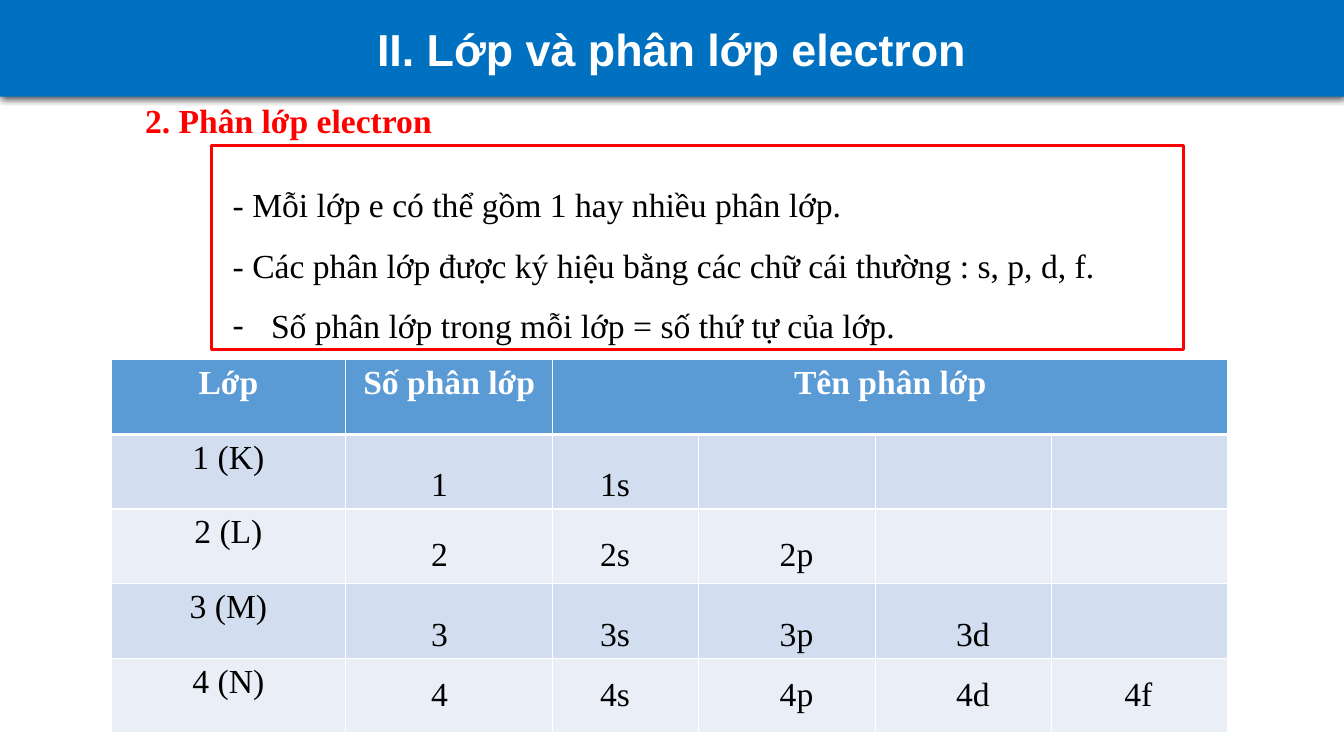
import lxml.etree
import pptx
import pptx.dml.color
import pptx.enum.shapes
import pptx.enum.text
import pptx.oxml
import pptx.oxml.ns
import pptx.util

Inches = pptx.util.Inches
ALIGN = pptx.enum.text.PP_ALIGN
ANCHOR = pptx.enum.text.MSO_ANCHOR

COLORS = {
    "banner": "0070C0", "red": "FF0000", "black": "000000", "white": "FFFFFF",
    "header": "5B9BD5", "odd": "D2DEEF", "even": "EAEFF7",
}


class LessonSlide:
    """Holds the lesson style and the slide being drawn."""

    def __init__(self, slide):
        self.slide = slide
        self.font = "Times New Roman"
        self.size = 24

    def color(self, name):
        return pptx.dml.color.RGBColor.from_string(COLORS[name])

    def add_element(self, parent, tag, **attributes):
        element = lxml.etree.SubElement(parent, pptx.oxml.ns.qn(tag))
        for key, value in attributes.items():
            element.set(key, str(value))
        return element

    def add_text(self, paragraph, text, color="black", bold=False, align=ALIGN.LEFT, font=None, size=None):
        paragraph.alignment = align
        run = paragraph.add_run()
        run.text = text
        run.font.name = font or self.font
        run.font.size = pptx.util.Pt(size or self.size)
        run.font.bold = bold
        run.font.color.rgb = self.color(color)

    def rectangle(self, shapes, left, top, width, height, fill=None, line=None):
        shape = shapes.add_shape(
            pptx.enum.shapes.MSO_SHAPE.RECTANGLE,
            Inches(left), Inches(top), Inches(width), Inches(height))
        shape.shadow.inherit = False
        if fill:
            shape.fill.solid()
            shape.fill.fore_color.rgb = self.color(fill)
        else:
            shape.fill.background()
        if line:
            shape.line.color.rgb = self.color(line)
            shape.line.width = pptx.util.Pt(2.25)
        else:
            shape.line.fill.background()
        return shape

    def banner(self, text):
        shape = self.rectangle(self.slide.shapes, 0, 0, 13.33, 0.96, fill="banner")
        effects = shape._element.spPr.find(pptx.oxml.ns.qn("a:effectLst"))
        shadow = self.add_element(
            effects, "a:outerShdw", blurRad=pptx.util.Pt(4.5), dist=pptx.util.Pt(1.5),
            dir=5400000, algn="t", rotWithShape=0)
        shade = self.add_element(shadow, "a:srgbClr", val=COLORS["black"])
        self.add_element(shade, "a:alpha", val=63000)
        shape.text_frame.vertical_anchor = ANCHOR.MIDDLE
        self.add_text(shape.text_frame.paragraphs[0], text, "white", True, ALIGN.CENTER, "Arial", 32)

    def text_box(self, shapes, left, top, width, height, wrap=True):
        box = shapes.add_textbox(Inches(left), Inches(top), Inches(width), Inches(height))
        box.text_frame.word_wrap = wrap
        return box.text_frame

    def label(self, text, left, top, width, wrap=True, **style):
        frame = self.text_box(self.slide.shapes, left, top, width, 0.5, wrap)
        self.add_text(frame.paragraphs[0], text, **style)

    def framed_notes(self, notes, bulleted):
        shapes = self.slide.shapes.add_group_shape().shapes
        frame = self.text_box(shapes, 2.21, 1.58, 11.12, 3.13)
        for index, text in enumerate(notes):
            paragraph = frame.add_paragraph() if index else frame.paragraphs[0]
            paragraph.line_spacing = 1.5
            self.add_text(paragraph, text, align=ALIGN.JUSTIFY)
            if index == bulleted:
                properties = paragraph._p.get_or_add_pPr()
                properties.set("marL", str(Inches(0.38)))
                properties.set("indent", str(-Inches(0.38)))
                self.add_element(properties, "a:buFont", typeface=self.font)
                self.add_element(properties, "a:buChar", char="-")
        self.rectangle(shapes, 2.1, 1.44, 9.64, 2.03, line="red")

    def style_cell(self, cell, fill, top=1, bottom=1):
        properties = cell._tc.get_or_add_tcPr()
        for side, width in (("L", 1), ("R", 1), ("T", top), ("B", bottom)):
            border = self.add_element(properties, f"a:ln{side}", w=pptx.util.Pt(width))
            solid = self.add_element(border, "a:solidFill")
            self.add_element(solid, "a:srgbClr", val=COLORS["white"])
        cell.fill.solid()
        cell.fill.fore_color.rgb = self.color(fill)

    def table(self, headings, shells, widths, left, top, row_height):
        row_count = len(shells) + 1
        table = self.slide.shapes.add_table(
            row_count, len(widths), Inches(left), Inches(top),
            Inches(sum(widths)), Inches(row_height * row_count)).table
        for column, width in zip(table.columns, widths):
            column.width = Inches(width)
        for index, row in enumerate(table.rows):
            row.height = Inches(row_height)
            fill = ("odd" if index % 2 else "even") if index else "header"
            for cell in row.cells:
                self.style_cell(cell, fill, 3 if index == 1 else 1, 1 if index else 3)
        table.cell(0, 2).merge(table.cell(0, len(widths) - 1))
        for index, text in enumerate(headings):
            self.add_text(table.cell(0, index).text_frame.paragraphs[0], text, "white", True, ALIGN.CENTER)
        for index, text in enumerate(shells, start=1):
            self.add_text(table.cell(index, 0).text_frame.paragraphs[0], text, align=ALIGN.CENTER)


def main():
    presentation = pptx.Presentation()
    presentation.slide_width = Inches(13.33)
    presentation.slide_height = Inches(7.5)
    lesson = LessonSlide(presentation.slides.add_slide(presentation.slide_layouts[6]))

    lesson.banner("II. Lớp và phân lớp electron")
    lesson.label("2. Phân lớp electron", 1.34, 0.94, 3.07, wrap=False, color="red", bold=True)
    lesson.framed_notes([
        "- Mỗi lớp e có thể gồm 1 hay nhiều phân lớp.",
        "- Các phân lớp được ký hiệu bằng các chữ cái thường : s, p, d, f.",
        "Số phân lớp trong mỗi lớp = số thứ tự của lớp.",
    ], bulleted=2)
    lesson.table(
        ["Lớp", "Số phân lớp", "Tên phân lớp"], ["1 (K)", "2 (L)", "3 (M)", "4 (N)"],
        [2.33, 2.05, 1.45, 1.75, 1.75, 1.75], 1.1, 3.57, 0.74)

    label_width = 1.18
    centers = [4.36, 6.1, 7.9, 9.65, 11.29]
    for number, top in enumerate([4.54, 5.24, 6.03, 6.63], start=1):
        names = [str(number)] + [f"{number}{letter}" for letter in "spdf"[:number]]
        for name, center in zip(names, centers):
            lesson.label(name, center - label_width / 2, top, label_width, align=ALIGN.CENTER)

    presentation.save("out.pptx")


if __name__ == "__main__":
    main()
